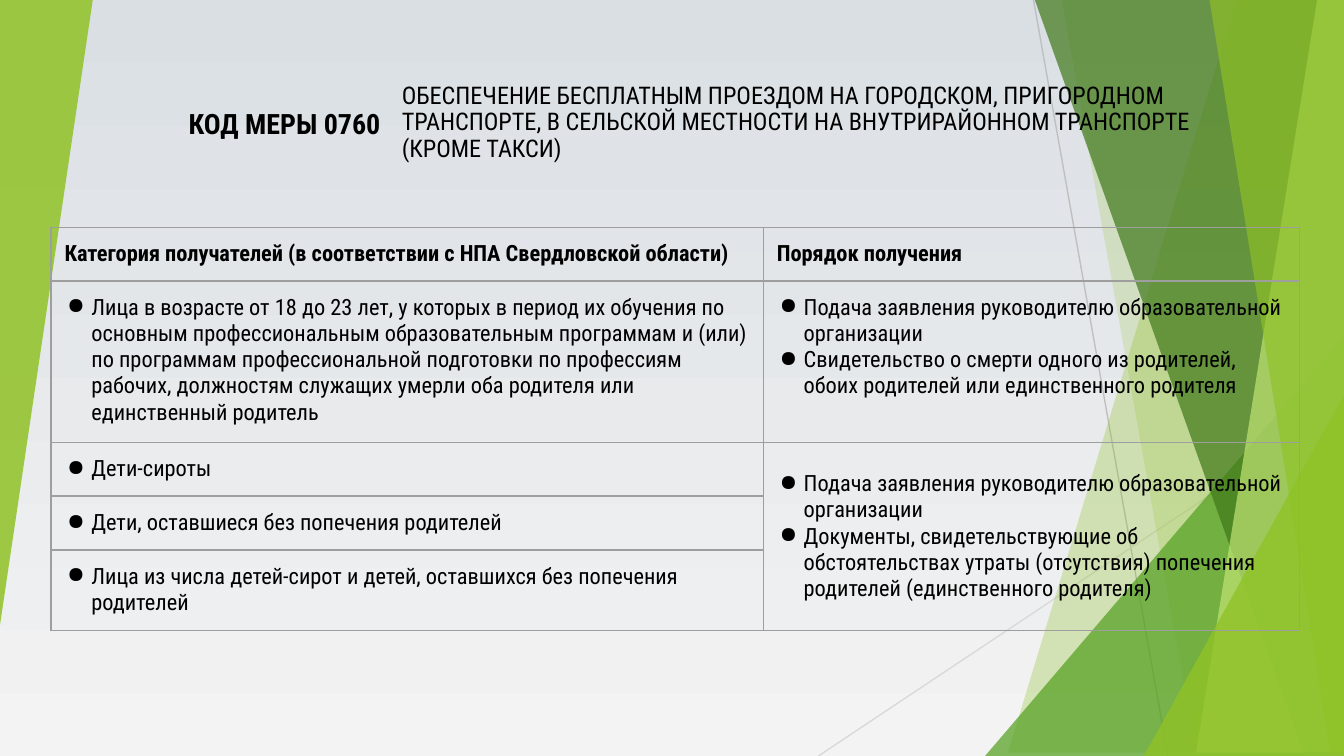
import pptx
import pptx.util
import pptx.dml.color
import pptx.enum.shapes
import pptx.enum.text
import pptx.oxml
import pptx.oxml.ns
import lxml.etree

THEME = {
    "font": "Roboto Condensed", "text": "000000", "border": "9E9E9E",
    "sky": "DADFE4", "ground": "F3F3F3",
    "lime": "90C226", "green": "54A021", "forest": "3F7819", "pale": "C0E474",
    "ray": "BFBFBF", "faint_ray": "D9D9D9",
    "title": 13, "code": 15, "body": 12, "hairline": 0.75,
}
# The grid has 100 columns and 56.25 rows of square units
UNIT = pptx.util.Inches(0.1)
COLS, ROWS = 100, 56.25
RGB = pptx.dml.color.RGBColor.from_string
ALIGN = pptx.enum.text.PP_ALIGN
MIDDLE = pptx.enum.text.MSO_ANCHOR.MIDDLE
TRIANGLE = pptx.enum.shapes.MSO_SHAPE.ISOSCELES_TRIANGLE
sub = lxml.etree.SubElement
qn = pptx.oxml.ns.qn


def write(frame, text, size=THEME["body"], bold=False, align=ALIGN.LEFT,
          spacing=1.0, bullet=False):
    """Write each line of text as a paragraph."""
    for number, line in enumerate(text.split("\n")):
        paragraph = frame.paragraphs[0] if number == 0 else frame.add_paragraph()
        paragraph.alignment = align
        paragraph.line_spacing = spacing
        run = paragraph.add_run()
        run.text = line
        run.font.name = THEME["font"]
        run.font.size = pptx.util.Pt(size)
        run.font.bold = bold
        run.font.color.rgb = RGB(THEME["text"])
        if bullet:
            properties = paragraph._p.get_or_add_pPr()
            properties.set("marL", str(int(2 * UNIT)))
            properties.set("indent", str(int(-1.8 * UNIT)))
            sub(sub(properties, qn("a:buClr")), qn("a:srgbClr"), val=THEME["text"])
            sub(properties, qn("a:buChar"), char="●")


def paint(facet, color, opacity):
    """Fill a facet with a see-through colour and no outline."""
    facet.shadow.inherit = False
    facet.line.fill.background()
    facet.fill.solid()
    facet.fill.fore_color.rgb = RGB(THEME[color])
    tint = facet._element.spPr.find(".//" + qn("a:srgbClr"))
    sub(tint, qn("a:alpha"), val=str(opacity * 1000))


deck = pptx.Presentation()
deck.slide_width, deck.slide_height = int(COLS * UNIT), int(ROWS * UNIT)
slide = deck.slides.add_slide(deck.slide_layouts[6])
shapes = slide.shapes

# Background
sky = slide.background.fill
sky.gradient()
sky.gradient_angle = 270
for stop, color in zip(sky.gradient_stops, ("sky", "ground")):
    stop.color.rgb = RGB(THEME[color])

# Thin rays
for x1, y1, x2, y2, color in (
    (76.9, 0, 86.9, ROWS, "ray"),
    (COLS, 30.2, 60.9, ROWS, "faint_ray"),
):
    ray = shapes.add_connector(
        pptx.enum.shapes.MSO_CONNECTOR.STRAIGHT,
        *(int(length * UNIT) for length in (x1, y1, x2, y2)))
    ray.line.color.rgb = RGB(THEME[color])
    ray.line.width = pptx.util.Pt(THEME["hairline"])
    sub(ray._element.spPr, qn("a:effectLst"))

# Right-hand facets, back to front: a band has a left edge running from its
# top column to its bottom column, a corner has a left column and a top row
for kind, start, end, color, opacity in (
    ("band", 92.1, 75.3, "lime", 30),
    ("band", 78.8, 88.7, "lime", 20),
    ("corner", 73.3, 25, "green", 72),
    ("band", 76.6, 96.8, "forest", 70),
    ("band", 97.8, 89.4, "pale", 70),
    ("band", 89.7, 98.8, "lime", 65),
    ("corner", 85.1, 29.4, "lime", 80),
):
    if kind == "band":
        outline = shapes.build_freeform(start, 0, scale=UNIT)
        outline.add_line_segments([(COLS, 0), (COLS, ROWS), (end, ROWS)], close=True)
        facet = outline.convert_to_shape()
    else:
        facet = shapes.add_shape(
            TRIANGLE, int(start * UNIT), int(end * UNIT),
            int((COLS - start) * UNIT), int((ROWS - end) * UNIT))
        facet.adjustments[0] = 1
    paint(facet, color, opacity)

# Left-hand facet
left_facet = shapes.add_shape(TRIANGLE, 0, 0, int(6.9 * UNIT), int(46.5 * UNIT))
left_facet.adjustments[0] = 1
left_facet.rotation = 180
paint(left_facet, "lime", 85)

# Heading: measure name and its code
for left, width, inset_x, inset_y, text, style in (
    (29.2, 63, 0.7, 0.4,
     "ОБЕСПЕЧЕНИЕ БЕСПЛАТНЫМ ПРОЕЗДОМ НА ГОРОДСКОМ, ПРИГОРОДНОМ ТРАНСПОРТЕ, "
     "В СЕЛЬСКОЙ МЕСТНОСТИ НА ВНУТРИРАЙОННОМ ТРАНСПОРТЕ (КРОМЕ ТАКСИ)",
     {"size": THEME["title"], "spacing": 0.9}),
    (8.2, 21.1, 1, 1, "КОД МЕРЫ 0760",
     {"size": THEME["code"], "bold": True, "align": ALIGN.RIGHT}),
):
    heading = shapes.add_textbox(
        *(int(length * UNIT) for length in (left, 5.3, width, 7.7))).text_frame
    heading.word_wrap = True
    heading.vertical_anchor = MIDDLE
    heading.margin_left = heading.margin_right = int(inset_x * UNIT)
    heading.margin_top = heading.margin_bottom = int(inset_y * UNIT)
    write(heading, text, **style)

# Table of recipients and procedures
APPLICATION = "Подача заявления руководителю образовательной организации\n"
RECIPIENTS = (
    ("Категория получателей (в соответствии с НПА Свердловской области)",
     "Порядок получения"),
    ("Лица в возрасте от 18 до 23 лет, у которых в период их обучения по основным "
     "профессиональным образовательным программам и (или) по программам "
     "профессиональной подготовки по профессиям рабочих, должностям служащих "
     "умерли оба родителя или единственный родитель",
     APPLICATION + "Свидетельство о смерти одного из родителей, обоих родителей "
     "или единственного родителя"),
    ("Дети-сироты",
     APPLICATION + "Документы, свидетельствующие об обстоятельствах утраты "
     "(отсутствия) попечения родителей (единственного родителя)"),
    ("Дети, оставшиеся без попечения родителей", None),
    ("Лица из числа детей-сирот и детей, оставшихся без попечения родителей", None),
)
column_widths = (53, 39.9)
row_heights = (3.9, 11.8, 3.9, 3.9, 5.9)
recipients = shapes.add_table(
    len(row_heights), len(column_widths), int(3.8 * UNIT), int(16.9 * UNIT),
    int(sum(column_widths) * UNIT), int(sum(row_heights) * UNIT)).table
recipients.first_row = recipients.horz_banding = False
for column, width in zip(recipients.columns, column_widths):
    column.width = int(width * UNIT)
for row, height in zip(recipients.rows, row_heights):
    row.height = int(height * UNIT)
recipients.cell(2, 1).merge(recipients.cell(4, 1))
recipients.cell(2, 1).vertical_anchor = MIDDLE

for r, texts in enumerate(RECIPIENTS):
    for c, text in enumerate(texts):
        cell = recipients.cell(r, c)
        cell.margin_left = cell.margin_right = UNIT
        cell.margin_top = cell.margin_bottom = UNIT
        for side in ("a:lnL", "a:lnR", "a:lnT", "a:lnB"):
            border = sub(cell._tc.get_or_add_tcPr(), qn(side),
                         w=str(int(pptx.util.Pt(THEME["hairline"]))))
            sub(sub(border, qn("a:solidFill")), qn("a:srgbClr"), val=THEME["border"])
        cell.fill.background()
        if text:
            write(cell.text_frame, text, bold=r == 0, bullet=r > 0)

deck.save("out.pptx")
